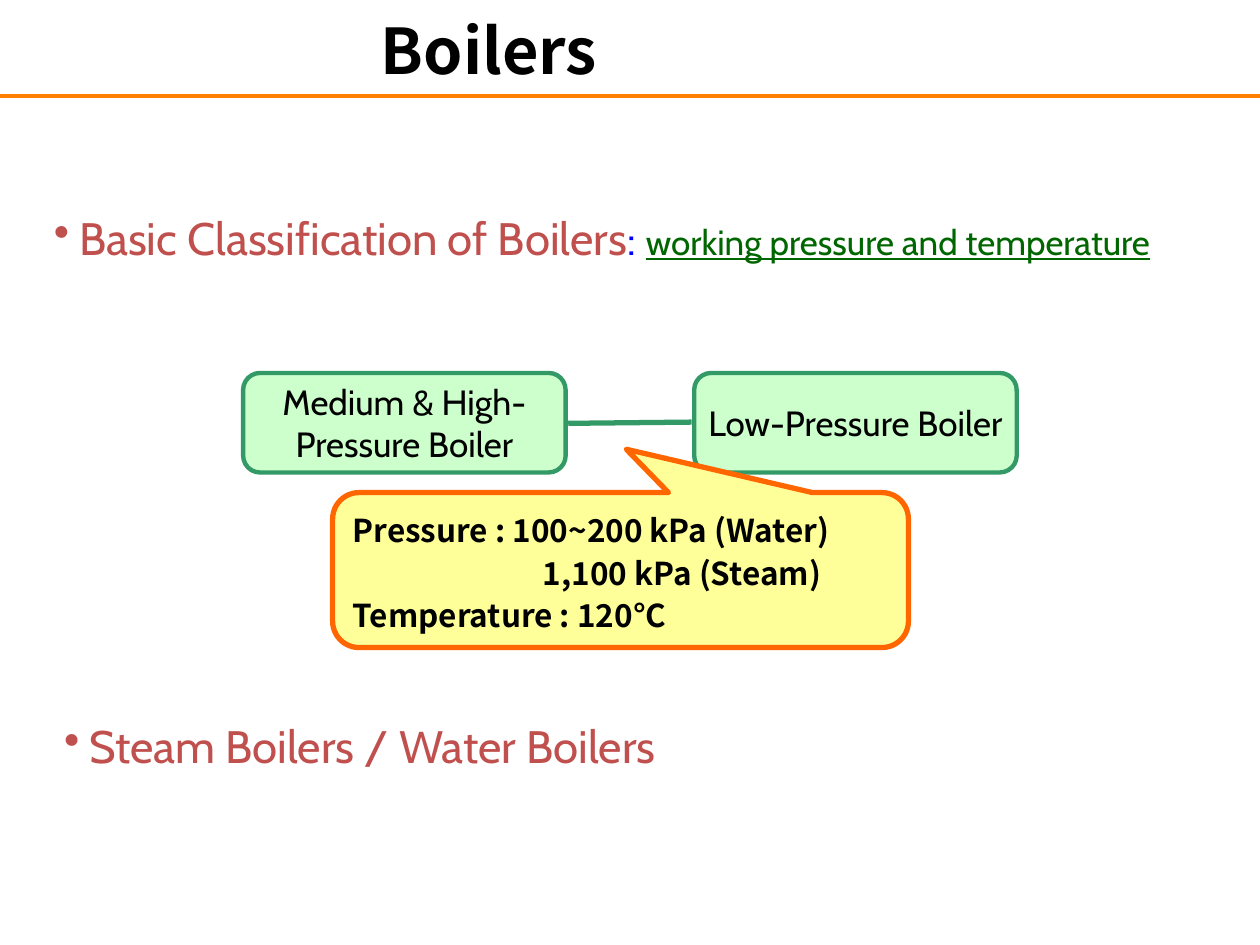
"""Build the slide on the basic classification of boilers."""
from lxml import etree
from pptx import Presentation, util as u
from pptx.dml.color import RGBColor
from pptx.enum import shapes, text
from pptx.oxml import ns

HUES = {"black": "000000", "rule": "FF7F00", "red": "C0504D", "blue": "0000FF",
        "dark": "006600", "mint": "CCFFCC", "green": "339966",
        "cream": "FFFF99", "orange": "FF6600"}
CABIN, NOTO = "Cabin", "Noto Sans CJK KR"
LEFT, MID = text.PP_ALIGN.LEFT, text.PP_ALIGN.CENTER


def tint(name):
    return RGBColor.from_string(HUES[name])


def write(para, words, size=20, hue="black", font=CABIN, bold=False, line=False):
    run = para.add_run()
    run.text = words
    face = run.font
    face.name, face.size, face.bold = font, u.Pt(size), bold
    face.underline = line
    face.color.rgb = tint(hue)


class Deck:
    def __init__(self):
        self.show = Presentation()
        self.show.slide_width, self.show.slide_height = u.Inches(10), u.Inches(7.5)
        self.slide = self.show.slides.add_slide(self.show.slide_layouts[5])

    def title(self, words, *box):
        head = self.slide.shapes.title
        head.left, head.top, head.width, head.height = map(u.Inches, box)
        frame = head.text_frame
        frame.vertical_anchor = text.MSO_ANCHOR.MIDDLE
        frame.paragraphs[0].alignment = MID
        write(frame.paragraphs[0], words, size=36, font=NOTO, bold=True)

    def line(self, start, end, hue, width):
        ends = map(u.Inches, (*start, *end))
        rule = self.slide.shapes.add_connector(shapes.MSO_CONNECTOR.STRAIGHT, *ends)
        rule.line.color.rgb, rule.line.width = tint(hue), u.Pt(width)
        etree.SubElement(rule._element.spPr, ns.qn("a:effectLst"))

    def bullet(self, box, *runs):
        frame = self.slide.shapes.add_textbox(*map(u.Inches, box)).text_frame
        frame.word_wrap = True
        para = frame.paragraphs[0]
        prop = para._p.get_or_add_pPr()
        gap = u.Inches(0.2)
        prop.set("marL", str(gap))
        prop.set("indent", str(-gap))
        etree.SubElement(prop, ns.qn("a:buChar")).set("char", "•")
        for words, look in runs:
            write(para, words, **look)

    def shape(self, kind, box, fill, edge, width, adjust):
        item = self.slide.shapes.add_shape(kind, *map(u.Inches, box))
        item.shadow.inherit = False
        item.fill.solid()
        item.fill.fore_color.rgb = tint(fill)
        item.line.color.rgb, item.line.width = tint(edge), u.Pt(width)
        for spot, value in enumerate(adjust):
            item.adjustments[spot] = value
        return item.text_frame

    def lines(self, frame, rows, align, **look):
        for row, words in enumerate(rows):
            para = frame.add_paragraph() if row else frame.paragraphs[0]
            para.alignment = align
            write(para, words, **look)

    def node(self, left, *rows):
        frame = self.shape(shapes.MSO_SHAPE.ROUNDED_RECTANGLE,
                           (left, 2.96, 2.56, 0.79), "mint", "green", 2.5, [0.17])
        frame.word_wrap = False
        frame.vertical_anchor = text.MSO_ANCHOR.MIDDLE
        self.lines(frame, rows, MID)

    def callout(self, box, rows, inset):
        frame = self.shape(shapes.MSO_SHAPE.ROUNDED_RECTANGULAR_CALLOUT, box,
                           "cream", "orange", 3, [0.01, -0.78, 0.17])
        frame.word_wrap = True
        frame.vertical_anchor = text.MSO_ANCHOR.TOP
        self.lines(frame, rows, LEFT, size=18, font=NOTO, bold=True)
        for para in frame.paragraphs:
            para.line_spacing = u.Pt(24.3)
        second = frame.paragraphs[1]._p.get_or_add_pPr()
        second.set("marL", str(u.Inches(inset)))


def main():
    deck = Deck()
    topic, colon = {"size": 26, "hue": "red"}, {"size": 24, "hue": "blue"}
    deck.title("Boilers", 0, 0, 7.76, 0.79)
    deck.line((0, 0.76), (10, 0.76), "rule", 2)
    deck.bullet((0.33, 1.62, 9.63, 0.53),
                ("Basic Classification of Boilers", topic), (": ", colon),
                ("working pressure and temperature", {"hue": "dark", "line": True}))
    deck.node(5.51, "Low-Pressure Boiler")
    deck.node(1.93, "Medium & High-", "Pressure Boiler")
    deck.callout((2.64, 3.91, 4.57, 1.23),
                 ("Pressure : 100~200 kPa (Water)", "1,100 kPa (Steam)",
                  "Temperature : 120°C"), 1.51)
    deck.bullet((0.41, 5.65, 9.49, 0.53), ("Steam Boilers / Water Boilers", topic))
    deck.line((4.51, 3.36), (5.49, 3.35), "green", 3)
    deck.show.save("out.pptx")


if __name__ == "__main__":
    main()
